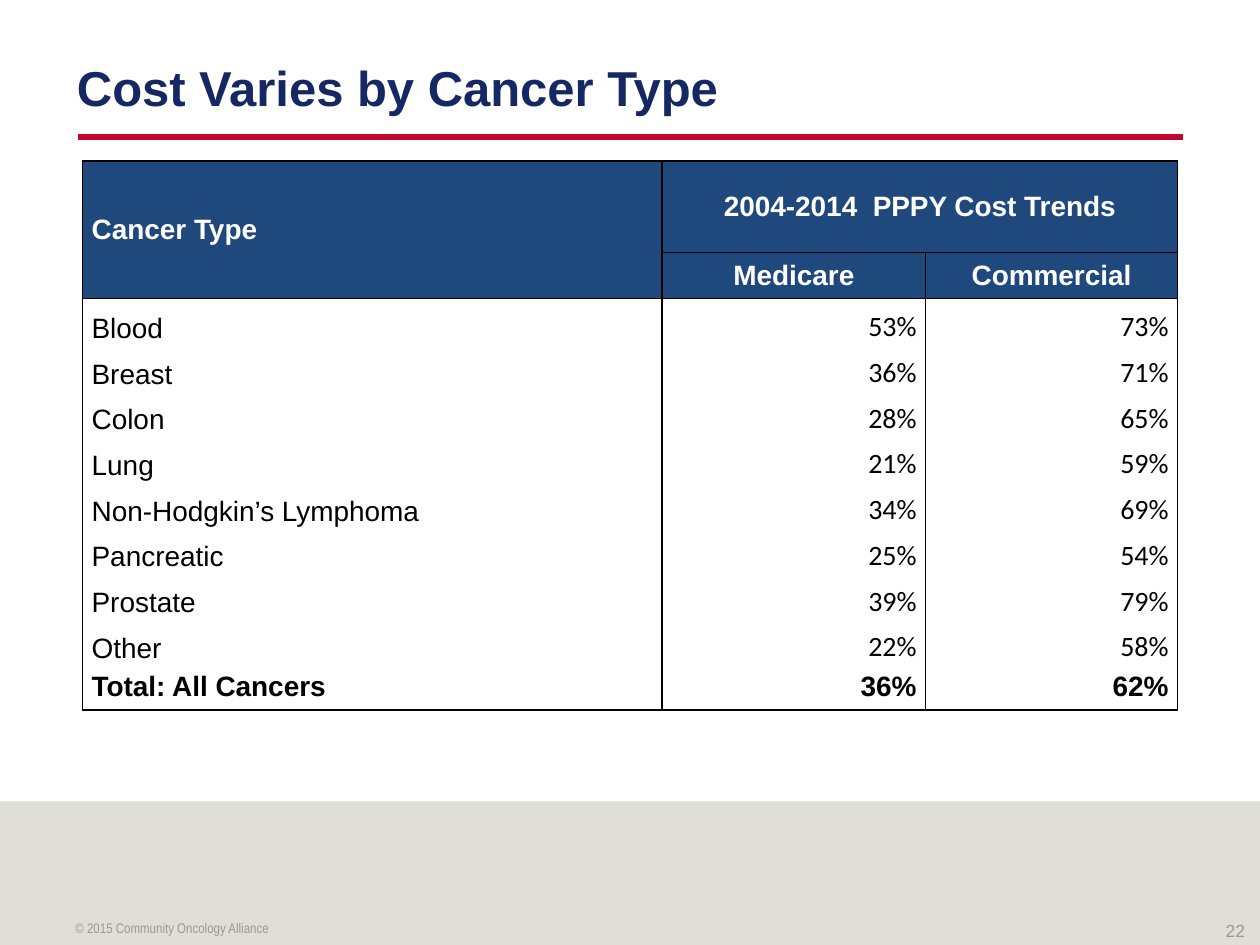
"""Builds the slide on cost trends by cancer type."""
from dataclasses import dataclass

from lxml.etree import SubElement
from pptx import Presentation
from pptx.dml.color import RGBColor
from pptx.enum.shapes import MSO_CONNECTOR as Connector, MSO_SHAPE as Shape
from pptx.enum.text import MSO_ANCHOR as Anchor, PP_ALIGN as Align
from pptx.oxml.ns import qn
from pptx.util import Pt

COLORS = {
    "navy": "162864",
    "red": "C3082D",
    "header": "1F497D",
    "band": "DFDED7",
    "grey": "999999",
    "white": "FFFFFF",
    "black": "000000",
}
SIDES = "LRTB"
COL_WIDTHS = (331.2, 150.5, 144)
HEADER_HEIGHT, ROW_HEIGHT = 52.4, 26.15


@dataclass(frozen=True)
class Style:
    size: float
    color: str
    font: str = "Arial"
    bold: bool = False
    align: Align = Align.LEFT
    anchor: Anchor = Anchor.TOP


@dataclass(frozen=True)
class Label:
    text: str
    box: tuple[float, float, float, float]
    insets: tuple[float, float, float, float]
    style: Style


@dataclass(frozen=True)
class Trend:
    cancer: str
    medicare: int
    commercial: int


LABELS = (
    Label("Cost Varies by Cancer Type", (44, 23.8, 648, 54.7), (0, 0, 7.2, 3.6),
          Style(28, "navy", bold=True, anchor=Anchor.MIDDLE)),
    Label("22", (579.6, 522, 131.8, 16.6), (7.2, 3.6, 0, 3.6),
          Style(10, "grey", align=Align.RIGHT)),
    Label("© 2015 Community Oncology Alliance", (36, 522, 516, 18), (7.2, 3.6, 7.2, 3.6),
          Style(8, "grey", "Arial Narrow")),
)
TRENDS = (
    Trend("Blood", 53, 73),
    Trend("Breast", 36, 71),
    Trend("Colon", 28, 65),
    Trend("Lung", 21, 59),
    Trend("Non-Hodgkin’s Lymphoma", 34, 69),
    Trend("Pancreatic", 25, 54),
    Trend("Prostate", 39, 79),
    Trend("Other", 22, 58),
    Trend("Total: All Cancers", 36, 62),
)


def rgb(name: str) -> RGBColor:
    return RGBColor.from_string(COLORS[name])


def write(tf, text: str, style: Style) -> None:
    tf.text = text
    p = tf.paragraphs[0]
    p.alignment = style.align
    font = p.runs[0].font
    font.name, font.size, font.bold = style.font, Pt(style.size), style.bold
    font.color.rgb = rgb(style.color)


def add_label(s, label: Label) -> None:
    tf = s.shapes.add_textbox(*map(Pt, label.box)).text_frame
    tf.word_wrap = True
    tf.margin_left, tf.margin_top, tf.margin_right, tf.margin_bottom = map(Pt, label.insets)
    tf.vertical_anchor = label.style.anchor
    write(tf, label.text, label.style)


def add_backdrop(s) -> None:
    band = s.shapes.add_shape(Shape.RECTANGLE, Pt(0), Pt(458), Pt(720), Pt(82))
    band.shadow.inherit = False
    band.fill.solid()
    band.fill.fore_color.rgb = rgb("band")
    band.line.fill.background()
    rule = s.shapes.add_connector(Connector.STRAIGHT, Pt(44.6), Pt(78.3), Pt(676), Pt(78.3))
    rule.line.color.rgb = rgb("red")
    rule.line.width = Pt(3)
    SubElement(rule._element.spPr, qn("a:effectLst"))


def set_borders(cell, drawn: str) -> None:
    tc_pr = cell._tc.get_or_add_tcPr()
    for side in SIDES:
        ln = SubElement(tc_pr, qn(f"a:ln{side}"), w=str(Pt(1)))
        if side in drawn:
            fill = SubElement(ln, qn("a:solidFill"))
            SubElement(fill, qn("a:srgbClr"), val=COLORS["black"])
        else:
            SubElement(ln, qn("a:noFill"))


def format_cell(cell, drawn: str, fill: str | None, anchor: Anchor) -> None:
    set_borders(cell, drawn)
    cell.margin_left = cell.margin_right = Pt(5.2)
    cell.margin_top = cell.margin_bottom = Pt(0)
    cell.vertical_anchor = anchor
    if fill:
        cell.fill.solid()
        cell.fill.fore_color.rgb = rgb(fill)
    else:
        cell.fill.background()


def add_header(table) -> None:
    for row in range(2):
        for col in range(3):
            format_cell(table.cell(row, col), SIDES, "header", Anchor.MIDDLE)
    table.cell(0, 0).merge(table.cell(1, 0))
    table.cell(0, 1).merge(table.cell(0, 2))
    headings = (
        (0, 0, "Cancer Type", Align.LEFT),
        (0, 1, "2004-2014  PPPY Cost Trends", Align.CENTER),
        (1, 1, "Medicare", Align.CENTER),
        (1, 2, "Commercial", Align.CENTER),
    )
    for row, col, text, align in headings:
        write(table.cell(row, col).text_frame, text, Style(16, "white", bold=True, align=align))


def add_trend(table, row: int, trend: Trend) -> None:
    first, total = trend == TRENDS[0], trend == TRENDS[-1]
    drawn = "LR" + "T" * first + "B" * total
    texts = (trend.cancer, f"{trend.medicare}%", f"{trend.commercial}%")
    for col, text in enumerate(texts):
        cell = table.cell(row, col)
        format_cell(cell, drawn, None, Anchor.MIDDLE if total else Anchor.BOTTOM)
        font = "Calibri" if col and not total else "Arial"
        align = Align.RIGHT if col else Align.LEFT
        write(cell.text_frame, text, Style(16, "black", font, total, align))


def add_cost_table(s) -> None:
    rows = len(TRENDS) + 2
    height = HEADER_HEIGHT + ROW_HEIGHT * (rows - 1)
    table = s.shapes.add_table(rows, 3, Pt(47.2), Pt(92), Pt(sum(COL_WIDTHS)), Pt(height)).table
    table.first_row = table.horz_banding = False
    for column, width in zip(table.columns, COL_WIDTHS):
        column.width = Pt(width)
    for index, row in enumerate(table.rows):
        row.height = Pt(ROW_HEIGHT if index else HEADER_HEIGHT)
    add_header(table)
    for row, trend in enumerate(TRENDS, start=2):
        add_trend(table, row, trend)


def main() -> None:
    prs = Presentation()
    prs.slide_width, prs.slide_height = Pt(720), Pt(540)
    s = prs.slides.add_slide(prs.slide_layouts[6])
    add_backdrop(s)
    for label in LABELS:
        add_label(s, label)
    add_cost_table(s)
    prs.save("out.pptx")


if __name__ == "__main__":
    main()
